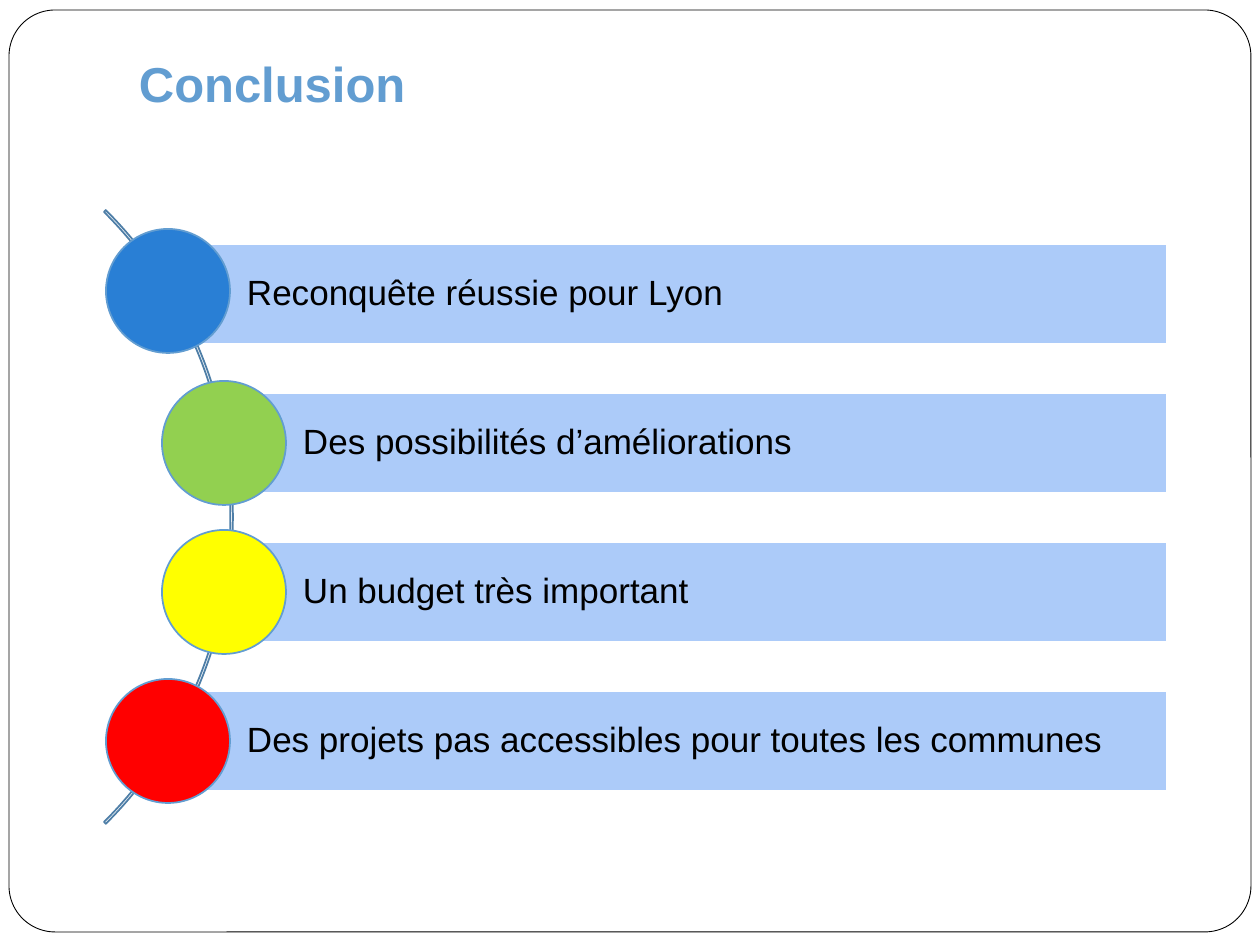
from pptx import Presentation
from pptx.dml.color import RGBColor
from pptx.enum.shapes import MSO_SHAPE as Shape
from pptx.enum.text import MSO_ANCHOR as Anchor, PP_ALIGN as Align
from pptx.util import Emu, Pt

PX = 914400 // 126
SLIDE_SIZE = (1260, 945)

BLACK = RGBColor(0x00, 0x00, 0x00)
WHITE = RGBColor(0xFF, 0xFF, 0xFF)
ACCENT = RGBColor(0x62, 0x9D, 0xD1)
ARC_BLUE = RGBColor(0x4E, 0x7E, 0xA7)
BAR_BLUE = RGBColor(0xAC, 0xCB, 0xF9)
BLUE = RGBColor(0x29, 0x7F, 0xD5)
GREEN = RGBColor(0x92, 0xD0, 0x50)
YELLOW = RGBColor(0xFF, 0xFF, 0x00)
RED = RGBColor(0xFF, 0x00, 0x00)

BAR_TOP, BAR_HEIGHT, BAR_PITCH = 244, 100, 149
BAR_RIGHT = 1167
OUTER_LEFT, INNER_LEFT = 168, 224
CIRCLE = 124

# text, bar left, circle colour, circle lift above the bar's middle
POINTS = [
    ("Reconquête réussie pour Lyon", OUTER_LEFT, BLUE, 3),
    ("Des possibilités d’améliorations", INNER_LEFT, GREEN, 0),
    ("Un budget très important", INNER_LEFT, YELLOW, 0),
    ("Des projets pas accessibles pour toutes les communes", OUTER_LEFT, RED, 0),
]


def px(*lengths):
    return [Emu(length * PX) for length in lengths]


def add_figure(slide, kind, box, fill, line, weight=1, adjustments=()):
    figure = slide.shapes.add_shape(kind, *px(*box))
    figure.shadow.inherit = False
    figure.fill.solid()
    figure.fill.fore_color.rgb = fill
    figure.line.color.rgb = line
    figure.line.width = Pt(weight)
    for index, value in enumerate(adjustments):
        figure.adjustments[index] = value
    return figure


def write(holder, text, anchor, margins, font_format, color, line_spacing=1.0):
    """Set left-aligned text; margins are left, top, right, bottom in px."""
    frame = holder.text_frame
    frame.word_wrap = True
    frame.vertical_anchor = anchor
    for side, margin in zip(("left", "top", "right", "bottom"), px(*margins)):
        setattr(frame, f"margin_{side}", margin)
    paragraph = frame.paragraphs[0]
    paragraph.alignment = Align.LEFT
    paragraph.line_spacing = line_spacing
    run = paragraph.add_run()
    run.text = text
    for name, value in font_format.items():
        setattr(run.font, name, value)
    run.font.color.rgb = color


def add_title(slide, text):
    title = slide.shapes.add_textbox(*px(126, 38, 1071, 87))
    write(title, text, Anchor.BOTTOM, (13, 6, 13, 13),
          {"name": "Arial", "size": Pt(28), "bold": True}, ACCENT)


def add_point(slide, row, text, left, color, lift):
    top = BAR_TOP + row * BAR_PITCH
    bar = add_figure(slide, Shape.RECTANGLE,
                     (left, top, BAR_RIGHT - left, BAR_HEIGHT), BAR_BLUE, WHITE)
    write(bar, text, Anchor.MIDDLE, (79, 8, 8, 8),
          {"name": "Arial", "size": Pt(20)}, BLACK, line_spacing=0.9)
    circle_top = top + (BAR_HEIGHT - CIRCLE) // 2 - lift
    add_figure(slide, Shape.OVAL,
               (left - CIRCLE // 2, circle_top, CIRCLE, CIRCLE), color, ACCENT)


def main():
    deck = Presentation()
    deck.slide_width, deck.slide_height = px(*SLIDE_SIZE)
    slide = deck.slides.add_slide(deck.slide_layouts[6])
    add_figure(slide, Shape.ROUNDED_RECTANGLE, (9, 10, 1242, 922),
               WHITE, BLACK, 0.5, [0.05])
    add_title(slide, "Conclusion")
    # The arc runs from 315° to 45°; angles are in units of 100000/60000 degrees.
    arc = add_figure(slide, Shape.BLOCK_ARC, (-635, 83, 868, 868),
                     WHITE, ARC_BLUE, adjustments=[189, 27, 0.003])
    arc.fill.background()
    for row, point in enumerate(POINTS):
        add_point(slide, row, *point)
    deck.save("out.pptx")


if __name__ == "__main__":
    main()
